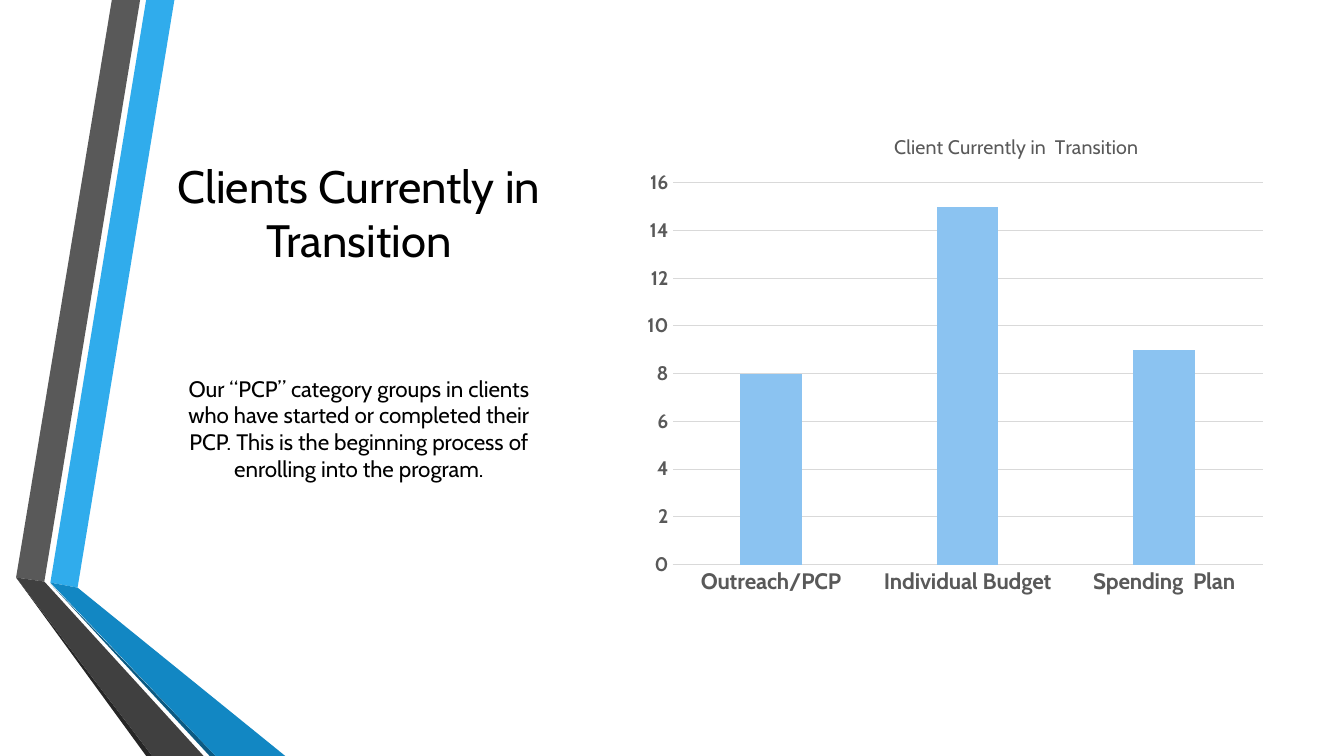
import lxml.etree
import pptx
import pptx.chart.data
import pptx.dml.color
import pptx.enum.chart
import pptx.enum.text
import pptx.oxml
import pptx.oxml.ns
import pptx.util

Inches = pptx.util.Inches
Pt = pptx.util.Pt
RGBColor = pptx.dml.color.RGBColor

BLACK = RGBColor(0x00, 0x00, 0x00)
LABEL_GRAY = RGBColor(0x59, 0x59, 0x59)
GRID_GRAY = RGBColor(0xD9, 0xD9, 0xD9)
BAR_BLUE = RGBColor(0x8B, 0xC3, 0xF1)
BLUE = RGBColor(0x30, 0xAC, 0xEC)
DARK_BLUE = RGBColor(0x12, 0x87, 0xC3)
DEEP_BLUE = RGBColor(0x0C, 0x5A, 0x82)
GRAY = RGBColor(0x59, 0x59, 0x59)
DARK_GRAY = RGBColor(0x40, 0x40, 0x40)
DEEP_GRAY = RGBColor(0x26, 0x26, 0x26)

RIBBON_FACES = [
    (BLUE, [(0.5, 5.78), (0.77, 5.83), (1.73, 0), (1.45, 0)]),
    (GRAY, [(1.39, 0), (1.11, 0), (0.16, 5.73), (0.44, 5.77)]),
    (DEEP_GRAY, [(0.16, 5.73), (1.45, 7.5), (1.51, 7.5)]),
    (DEEP_BLUE, [(0.5, 5.79), (2.08, 7.5), (2.14, 7.5)]),
    (DARK_BLUE, [(0.5, 5.78), (2.14, 7.5), (2.83, 7.5), (0.77, 5.83)]),
    (DARK_GRAY, [(2.02, 7.5), (0.44, 5.77), (0.16, 5.73), (1.51, 7.5)]),
]


def set_layout(parent, index, **fractions):
    """Place a chart part by fractions of the chart area."""
    qn = pptx.oxml.ns.qn
    for old_layout in parent.findall(qn("c:layout")):
        parent.remove(old_layout)
    layout = pptx.oxml.parse_xml(f"<c:layout {pptx.oxml.ns.nsdecls('c')}/>")
    manual = lxml.etree.SubElement(layout, qn("c:manualLayout"))
    settings = {"xMode": "edge", "yMode": "edge", **fractions}
    if "w" in fractions:
        settings = {"layoutTarget": "inner", **settings}
    for name, value in settings.items():
        lxml.etree.SubElement(manual, qn(f"c:{name}")).set("val", str(value))
    parent.insert(index, layout)


class SlideBuilder:
    font_name = "Cabin"

    def __init__(self, slide):
        self.slide = slide

    def style_font(self, font, size, color, bold=False):
        font.name = self.font_name
        font.size = Pt(size)
        font.bold = bold
        font.color.rgb = color

    def add_polygon(self, color, points):
        corners = [(Inches(x), Inches(y)) for x, y in points]
        builder = self.slide.shapes.build_freeform(*corners[0])
        builder.add_line_segments(corners[1:], close=True)
        shape = builder.convert_to_shape()
        shape.shadow.inherit = False
        shape.fill.solid()
        shape.fill.fore_color.rgb = color
        shape.line.fill.background()

    def add_text(self, text, top, height, size, anchor, bottom_margin=0.05):
        box = self.slide.shapes.add_textbox(
            Inches(1.62), Inches(top), Inches(3.88), Inches(height))
        frame = box.text_frame
        frame.text = text
        frame.word_wrap = True
        frame.vertical_anchor = anchor
        frame.margin_bottom = Inches(bottom_margin)
        paragraph = frame.paragraphs[0]
        paragraph.alignment = pptx.enum.text.PP_ALIGN.CENTER
        self.style_font(paragraph.runs[0].font, size, BLACK)

    def add_column_chart(self, title, categories, values):
        data = pptx.chart.data.CategoryChartData()
        data.categories = categories
        data.add_series("Series 1", values)
        chart = self.slide.shapes.add_chart(
            pptx.enum.chart.XL_CHART_TYPE.COLUMN_CLUSTERED,
            Inches(6.29), Inches(1.09), Inches(6.36), Inches(4.92), data).chart
        self.style_font(chart.font, 10, BLACK)
        chart.has_legend = False

        chart.has_title = True
        title_frame = chart.chart_title.text_frame
        title_frame.text = title
        self.style_font(title_frame.paragraphs[0].runs[0].font, 14, LABEL_GRAY)
        chart_element = chart._chartSpace.chart
        set_layout(chart_element.find(pptx.oxml.ns.qn("c:title")), 1, x=0.4, y=0.04)
        set_layout(chart_element.plotArea, 0, x=0.06, y=0.147, w=0.92, h=0.77)

        plot = chart.plots[0]
        plot.vary_by_categories = False
        plot.gap_width = 219
        plot.overlap = -27
        fill = plot.series[0].format.fill
        fill.solid()
        fill.fore_color.rgb = BAR_BLUE

        for axis, size in ((chart.category_axis, 16), (chart.value_axis, 14)):
            axis.major_tick_mark = pptx.enum.chart.XL_TICK_MARK.NONE
            axis.minor_tick_mark = pptx.enum.chart.XL_TICK_MARK.NONE
            self.style_font(axis.tick_labels.font, size, LABEL_GRAY, bold=True)
        value_axis = chart.value_axis
        value_axis.minimum_scale = 0
        value_axis.maximum_scale = 16
        value_axis.major_unit = 2
        value_axis.format.line.fill.background()
        for line in (chart.category_axis.format.line,
                     value_axis.major_gridlines.format.line):
            line.color.rgb = GRID_GRAY
            line.width = Pt(0.75)


def main():
    presentation = pptx.Presentation()
    presentation.slide_width = Inches(13.33)
    presentation.slide_height = Inches(7.5)
    builder = SlideBuilder(
        presentation.slides.add_slide(presentation.slide_layouts[6]))
    for color, points in RIBBON_FACES:
        builder.add_polygon(color, points)
    anchors = pptx.enum.text.MSO_ANCHOR
    builder.add_text("Clients Currently in Transition", 1.75, 1.5, 32.4,
                     anchors.BOTTOM, bottom_margin=0.6)
    builder.add_text(
        "Our “PCP” category groups in clients who have started or completed "
        "their PCP. This is the beginning process of enrolling into the program.",
        3.25, 2, 16, anchors.MIDDLE)
    builder.add_column_chart(
        "Client Currently in  Transition",
        ["Outreach/PCP", "Individual Budget", "Spending  Plan"], [8, 15, 9])
    presentation.save("out.pptx")


if __name__ == "__main__":
    main()
